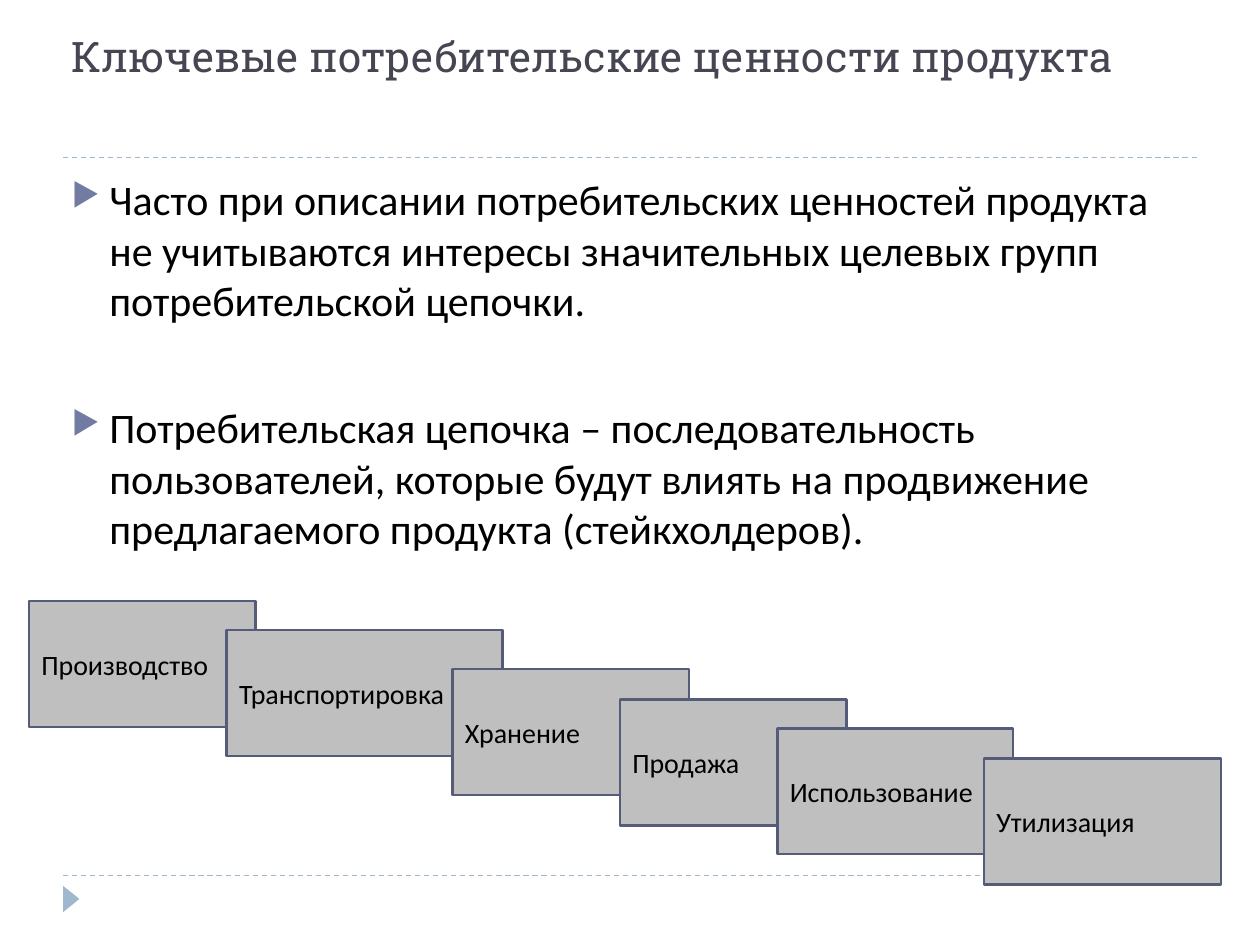
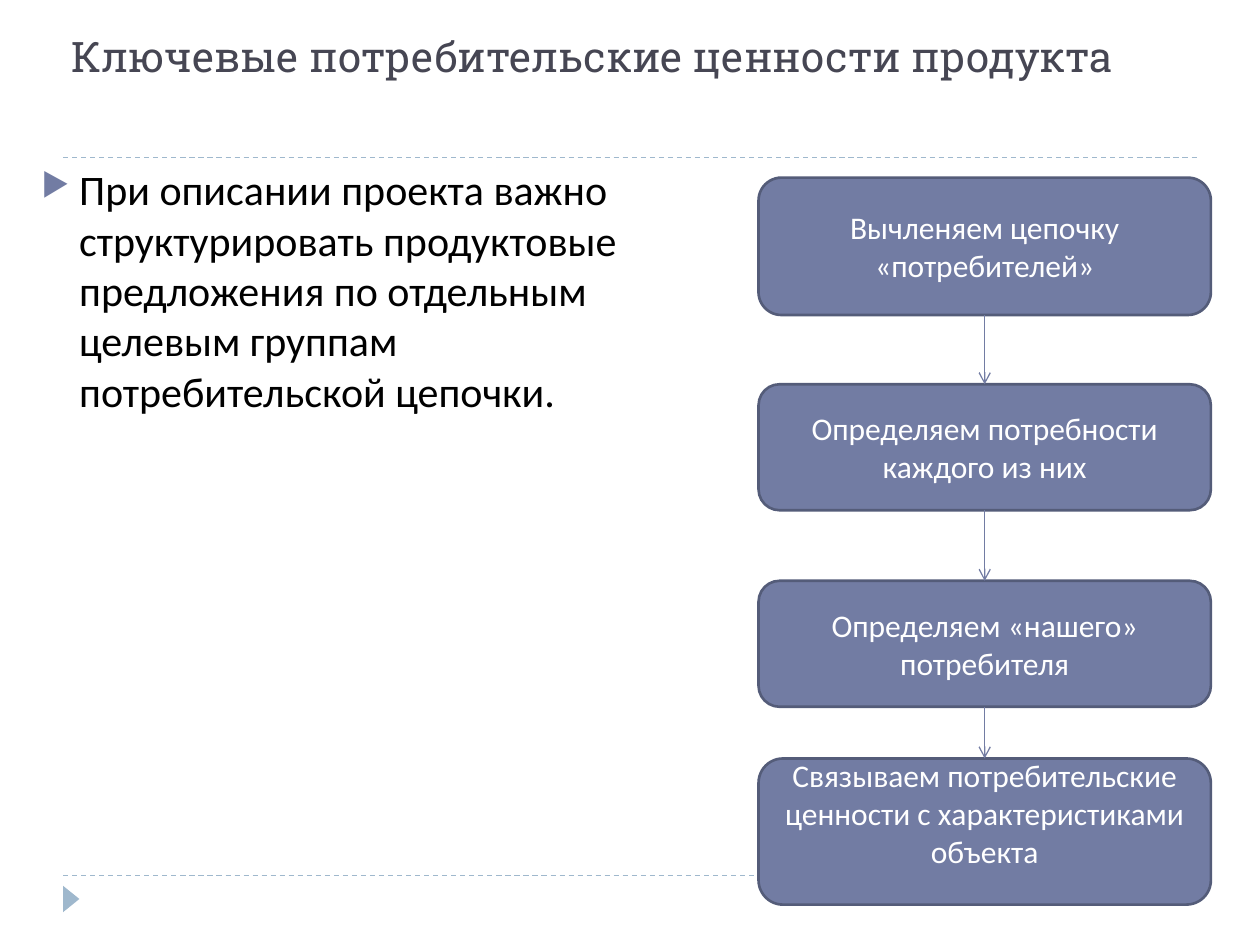
from dataclasses import dataclass

from lxml.etree import SubElement
from pptx import Presentation
from pptx.dml.color import RGBColor
from pptx.enum.dml import MSO_LINE
from pptx.enum.shapes import MSO_CONNECTOR, MSO_SHAPE
from pptx.enum.text import MSO_ANCHOR, PP_ALIGN
from pptx.oxml.ns import qn
from pptx.util import Inches, Pt


@dataclass(frozen=True)
class Theme:
    title_color: str = "464653"
    text: str = "000000"
    light: str = "FFFFFF"
    accent: str = "727CA3"
    outline: str = "545C79"
    rule: str = "9FB8CD"
    stage: str = "BFBFBF"
    title_font: str = "Roboto Slab"
    body_font: str = "Calibri"
    title_size: int = 24
    body_size: int = 24
    step_size: int = 18
    stage_size: int = 16
    border: float = 1.5
    hairline: float = 0.75


T = Theme()
TITLE = "Ключевые потребительские ценности продукта"


def set_all(target, **values):
    for name, value in values.items():
        setattr(target, name, value)


def write(p, text, font, size, color):
    r = p.add_run()
    r.text = text
    set_all(r.font, name=font, size=Pt(size))
    r.font.color.rgb = RGBColor.from_string(color)


def add_text_box(slide, box, anchor):
    tf = slide.shapes.add_textbox(*map(Inches, box)).text_frame
    set_all(tf, word_wrap=True, vertical_anchor=anchor)
    return tf


def add_shape(slide, kind, box, fill, outline=None):
    sp = slide.shapes.add_shape(kind, *map(Inches, box))
    sp.shadow.inherit = False
    sp.fill.solid()
    sp.fill.fore_color.rgb = RGBColor.from_string(fill)
    if outline:
        sp.line.color.rgb = RGBColor.from_string(outline)
        sp.line.width = Pt(T.border)
    else:
        sp.line.fill.background()
    return sp


def add_label(sp, text, size, color, align):
    tf = sp.text_frame
    set_all(tf, word_wrap=True, vertical_anchor=MSO_ANCHOR.MIDDLE)
    p = tf.paragraphs[0]
    p.alignment = align
    write(p, text, T.body_font, size, color)


def add_line(slide, start, end, color):
    ln = slide.shapes.add_connector(MSO_CONNECTOR.STRAIGHT, *map(Inches, start + end))
    ln.line.color.rgb = RGBColor.from_string(color)
    ln.line.width = Pt(T.hairline)
    SubElement(ln._element.spPr, qn("a:effectLst"))
    return ln


def add_frame(prs):
    """Slide with the shared rules, corner marker and title."""
    slide = prs.slides.add_slide(prs.slide_layouts[6])
    for y in (6.95, 1.25):
        ln = add_line(slide, (0.5, y), (9.5, y), T.rule)
        ln.line.dash_style = MSO_LINE.DASH
    marker = add_shape(slide, MSO_SHAPE.ISOSCELES_TRIANGLE, (0.46, 7.07, 0.21, 0.13), T.rule)
    marker.rotation = 90
    tf = add_text_box(slide, (0.47, 0.17, 9.03, 0.54), MSO_ANCHOR.MIDDLE)
    write(tf.paragraphs[0], TITLE, T.title_font, T.title_size, T.title_color)
    return slide


def add_bullets(slide, box, texts, gap=44):
    """Bulleted text, with a wide gap between paragraphs."""
    tf = add_text_box(slide, box, MSO_ANCHOR.TOP)
    for i, text in enumerate(texts):
        p = tf.add_paragraph() if i else tf.paragraphs[0]
        p.space_before = Pt(gap if i else 6)
        pPr = p._p.get_or_add_pPr()
        pPr.set("marL", str(Inches(0.3)))
        pPr.set("indent", str(-Inches(0.3)))
        SubElement(SubElement(pPr, qn("a:buClr")), qn("a:srgbClr"), val=T.accent)
        SubElement(pPr, qn("a:buSzPct"), val="76000")
        SubElement(pPr, qn("a:buChar"), char="▶")
        write(p, text, T.body_font, T.body_size, T.text)


def add_cascade(slide, left, top, stages, height=1):
    """Overlapping stages that step down; offsets count from left and top."""
    for text, dx, dy, width in stages:
        sp = add_shape(slide, MSO_SHAPE.RECTANGLE, (left + dx, top + dy, width, height),
                       T.stage, T.outline)
        add_label(sp, text, T.stage_size, T.text, PP_ALIGN.LEFT)


def add_flow(slide, left, top, width, steps):
    """Column of steps joined by arrows; offsets count from top."""
    boxes = []
    for text, dy, height in steps:
        sp = add_shape(slide, MSO_SHAPE.ROUNDED_RECTANGLE, (left, top + dy, width, height),
                       T.accent, T.outline)
        add_label(sp, text, T.step_size, T.light, PP_ALIGN.CENTER)
        boxes.append(sp)
    # The last step sits high in its box
    set_all(boxes[-1].text_frame, margin_top=0, margin_bottom=Inches(0.3))
    for upper, lower in zip(boxes, boxes[1:]):
        ln = add_line(slide, (left, top), (left, top), T.accent)
        ln.begin_connect(upper, 2)
        ln.end_connect(lower, 0)
        SubElement(ln.line._get_or_add_ln(), qn("a:tailEnd"), type="arrow")


def build_chain_slide(prs):
    slide = add_frame(prs)
    add_bullets(slide, (0.47, 1.33, 9.03, 3.74), [
        "Часто при описании потребительских ценностей продукта не учитываются "
        "интересы значительных целевых групп потребительской цепочки.",
        "Потребительская цепочка – последовательность пользователей, которые будут "
        "влиять на продвижение предлагаемого продукта (стейкхолдеров).",
    ])
    add_cascade(slide, 0.23, 4.77, [
        ("Производство", 0, 0, 1.8),
        ("Транспортировка", 1.57, 0.23, 2.19),
        ("Хранение", 3.36, 0.54, 1.88),
        ("Продажа", 4.69, 0.78, 1.8),
        ("Использование", 5.94, 1.01, 1.87),
        ("Утилизация", 7.58, 1.25, 1.88),
    ])


def build_steps_slide(prs):
    slide = add_frame(prs)
    add_bullets(slide, (0.23, 1.25, 5.31, 2.58), [
        "При описании проекта важно структурировать продуктовые предложения "
        "по отдельным целевым группам потребительской цепочки.",
    ])
    add_flow(slide, 6.02, 1.41, 3.59, [
        ("Вычленяем цепочку «потребителей»", 0, 1.09),
        ("Определяем потребности каждого из них", 1.64, 1),
        ("Определяем «нашего» потребителя", 3.2, 1),
        ("Связываем потребительские ценности с характеристиками объекта", 4.61, 1.16),
    ])


def main():
    prs = Presentation()
    set_all(prs, slide_width=Inches(10), slide_height=Inches(7.5))
    build_chain_slide(prs)
    build_steps_slide(prs)
    prs.save("out.pptx")


if __name__ == "__main__":
    main()
